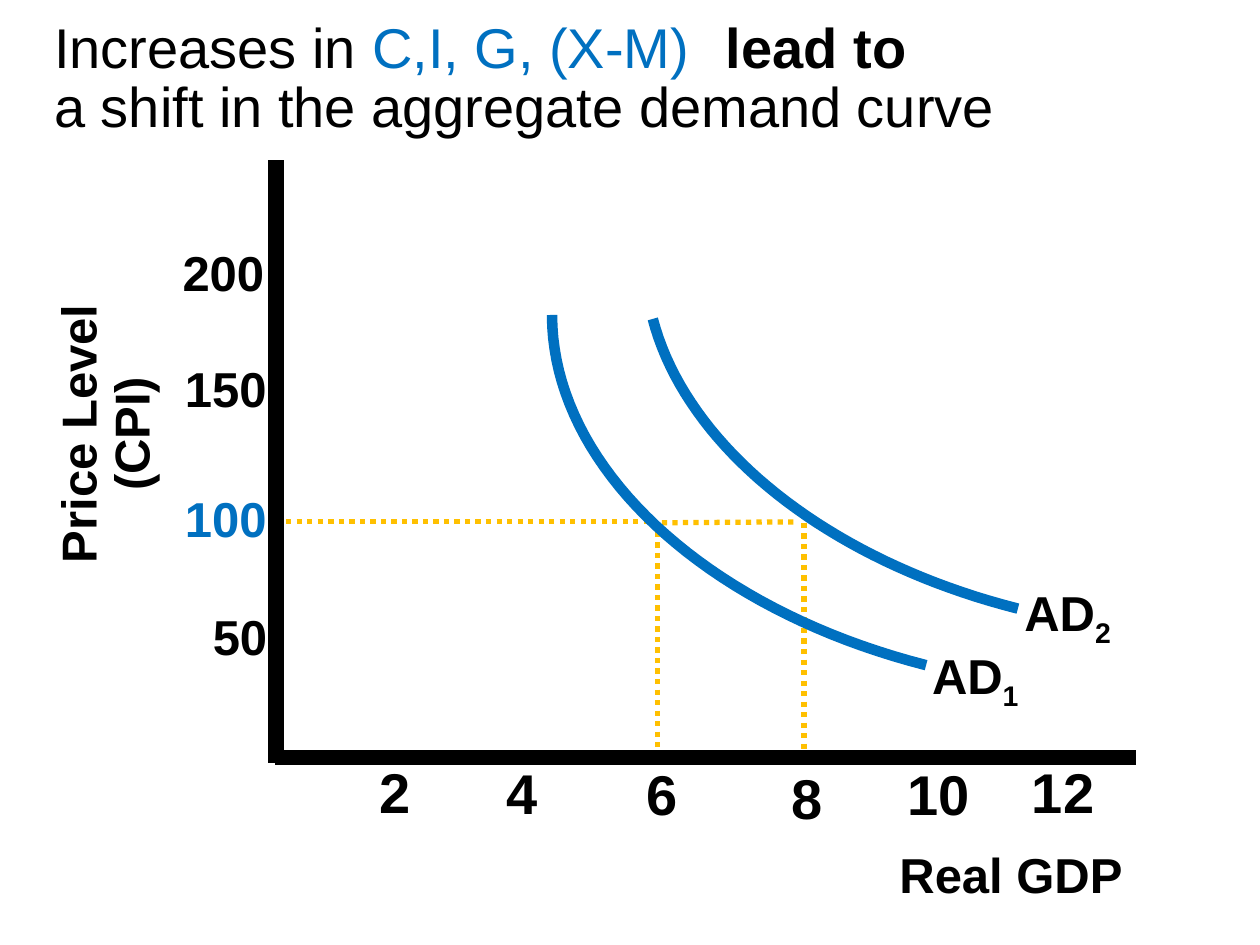
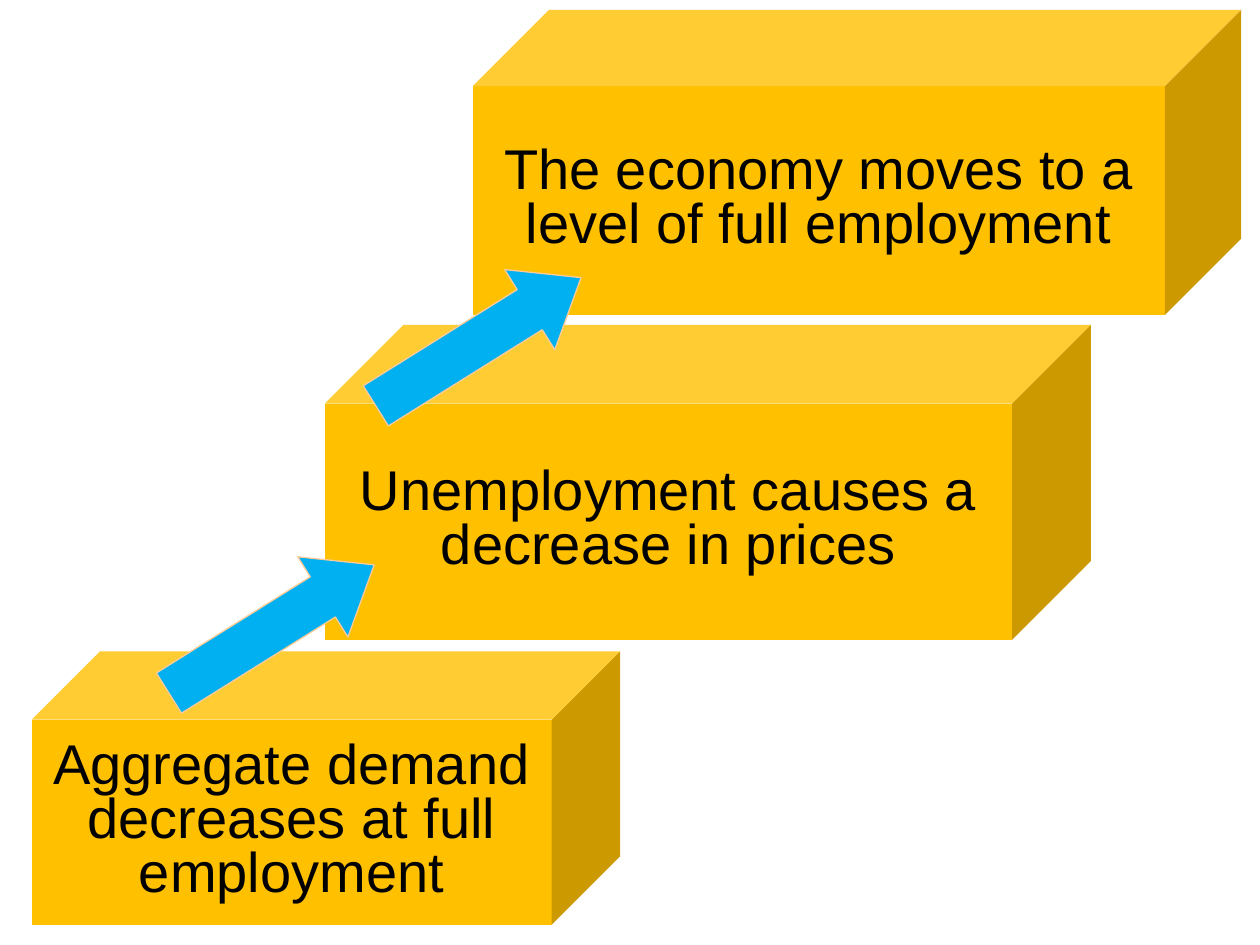
from dataclasses import dataclass

from lxml import etree
from pptx import Presentation
from pptx.dml.color import RGBColor
from pptx.enum.dml import MSO_LINE
from pptx.enum.shapes import MSO_CONNECTOR, MSO_SHAPE
from pptx.enum.text import MSO_ANCHOR, MSO_AUTO_SIZE, PP_ALIGN
from pptx.oxml.ns import qn
from pptx.util import Cm, Pt

LEFT, CENTER = PP_ALIGN.LEFT, PP_ALIGN.CENTER
TOP, MIDDLE = MSO_ANCHOR.TOP, MSO_ANCHOR.MIDDLE
NO_AUTOFIT = MSO_AUTO_SIZE.NONE
STRAIGHT = MSO_CONNECTOR.STRAIGHT
CUBE, UP_ARROW = MSO_SHAPE.CUBE, MSO_SHAPE.UP_ARROW
SOLID, DOTTED = MSO_LINE.SOLID, MSO_LINE.ROUND_DOT
TITLE_ONLY_LAYOUT, BLANK_LAYOUT = 5, 6


@dataclass(frozen=True)
class Theme:
    font: str = "Arial"
    black: RGBColor = RGBColor(0x00, 0x00, 0x00)
    blue: RGBColor = RGBColor(0x00, 0x70, 0xC0)
    gold: RGBColor = RGBColor(0xFF, 0xC0, 0x00)
    sky: RGBColor = RGBColor(0x00, 0xB0, 0xF0)
    peach: RGBColor = RGBColor(0xFF, 0xCC, 0x99)
    large: int = 32
    medium: int = 28
    axis_width: float = 9
    curve_width: float = 6
    guide_width: float = 3
    arrow_outline: float = 0.75
    tight_spacing: float = 0.8
    label_spacing: float = 0.9


THEME = Theme()


@dataclass(frozen=True)
class Run:
    text: str
    size: int = THEME.large
    color: RGBColor = THEME.black
    bold: bool = False
    subscript: bool = False


@dataclass(frozen=True)
class Box:
    left: float
    top: float
    width: float
    height: float

    def lengths(self) -> tuple:
        return Cm(self.left), Cm(self.top), Cm(self.width), Cm(self.height)


@dataclass(frozen=True)
class Label:
    box: Box
    runs: tuple
    align: PP_ALIGN = LEFT
    rotation: float = 0


@dataclass(frozen=True)
class Line:
    start: tuple
    end: tuple
    color: RGBColor
    width: float
    dash: MSO_LINE


@dataclass(frozen=True)
class Step:
    box: Box
    text: str


def medium(text: str, color: RGBColor = THEME.black) -> Run:
    return Run(text, THEME.medium, color, bold=True)


def curve_name(number: str) -> tuple:
    return medium("AD"), Run(number, THEME.medium, bold=True, subscript=True)


def guide(start: tuple, end: tuple) -> Line:
    return Line(start, end, THEME.gold, THEME.guide_width, DOTTED)


def axis(start: tuple, end: tuple) -> Line:
    return Line(start, end, THEME.black, THEME.axis_width, SOLID)


TITLE_BOX = Box(0.84, 0.38, 20.75, 2.5)
TITLE_TAB = 13.54
TITLE_LINES = (
    (
        Run("Increases in "),
        Run("C,I, G, (X-M)", color=THEME.blue),
        Run("\tlead to", bold=True),
    ),
    (Run("a shift in the aggregate demand curve"),),
)

PRICE_LABELS = [
    Label(Box(3.43, 4.9, 2.29, 1.35), (medium("200"),)),
    Label(Box(3.48, 7.24, 2.5, 1.35), (medium("150"),)),
    Label(Box(3.48, 9.86, 2.5, 1.35), (medium("100", THEME.blue),)),
    Label(Box(4.04, 12.24, 2, 1.35), (medium("50"),)),
]
OUTPUT_LABELS = [
    Label(Box(center - 0.95, top, 1.9, 1.3), (Run(text, bold=True),), CENTER)
    for text, center, top in (
        ("2", 7.97, 15.29),
        ("4", 10.52, 15.32),
        ("6", 13.35, 15.34),
        ("8", 16.28, 15.42),
        ("10", 18.92, 15.34),
        ("12", 21.43, 15.29),
    )
]
NAME_LABELS = [
    Label(Box(18.54, 12.9, 3, 1.35), curve_name("1")),
    Label(Box(20.4, 11.63, 3, 1.35), curve_name("2")),
    Label(Box(-1.66, 7.54, 7.67, 2.41), (medium("Price Level (CPI)"),), CENTER, 270),
    Label(Box(17.42, 17.04, 5.92, 1.17), (medium("Real GDP"),), CENTER),
]

GRAPH_LINES = (
    guide((16.21, 10.54), (16.21, 15.39)),
    guide((13.26, 10.72), (13.26, 15.39)),
    guide((13.13, 10.54), (16.08, 10.52)),
    guide((5.77, 10.52), (13.13, 10.52)),
    axis((5.56, 3.23), (5.56, 15.39)),
    axis((5.54, 15.27), (22.91, 15.27)),
)

DEMAND_CURVES = (
    ((18.67, 13.41), (14.2, 12.27), (11.13, 9.4), (11.13, 6.35)),
    ((20.52, 12.27), (16.69, 11.3), (13.84, 9.02), (13.16, 6.43)),
)
CURVE_SEGMENTS = 40

STEPS = (
    Step(Box(0.64, 13.13, 11.86, 5.51), "Aggregate demand decreases at full employment"),
    Step(Box(6.55, 6.55, 15.44, 6.35), "Unemployment causes a decrease in prices"),
    Step(Box(9.53, 0.2, 15.49, 6.15), "The economy moves to a level of full employment"),
)
ARROWS = (Box(4.52, 10.24, 1.91, 4.88), Box(8.69, 4.45, 1.91, 4.88))
ARROW_ROTATION = 58
ARROW_HEAD = 0.64


def write_paragraph(paragraph, runs: tuple, align: PP_ALIGN, spacing: float, before: float) -> None:
    paragraph.alignment = align
    paragraph.line_spacing = spacing
    paragraph.space_before = Pt(before)
    for item in runs:
        run = paragraph.add_run()
        run.text = item.text
        run.font.name = THEME.font
        run.font.size = Pt(item.size)
        run.font.bold = item.bold
        run.font.color.rgb = item.color
        if item.subscript:
            run._r.get_or_add_rPr().set("baseline", "-25000")


def add_title(slide) -> None:
    title = slide.shapes.title
    title.left, title.top, title.width, title.height = TITLE_BOX.lengths()
    frame = title.text_frame
    frame.word_wrap = True
    frame.auto_size = NO_AUTOFIT
    frame.vertical_anchor = TOP
    for index, runs in enumerate(TITLE_LINES):
        paragraph = frame.add_paragraph() if index else frame.paragraphs[0]
        write_paragraph(paragraph, runs, LEFT, THEME.tight_spacing, 3)
    tabs = etree.SubElement(frame.paragraphs[0]._p.get_or_add_pPr(), qn("a:tabLst"))
    etree.SubElement(tabs, qn("a:tab"), pos=str(Cm(TITLE_TAB)), algn="l")


def add_label(slide, label: Label) -> None:
    shape = slide.shapes.add_textbox(*label.box.lengths())
    shape.rotation = label.rotation
    shape.text_frame.word_wrap = True
    write_paragraph(
        shape.text_frame.paragraphs[0], label.runs, label.align, THEME.label_spacing, 1
    )


def add_line(slide, line: Line) -> None:
    points = [Cm(value) for value in line.start + line.end]
    connector = slide.shapes.add_connector(STRAIGHT, *points)
    connector.line.color.rgb = line.color
    connector.line.width = Pt(line.width)
    connector.line.dash_style = line.dash
    etree.SubElement(connector._element.spPr, qn("a:effectLst"))


def curve_point(controls: tuple, t: float) -> tuple:
    weights = ((1 - t) ** 3, 3 * t * (1 - t) ** 2, 3 * t**2 * (1 - t), t**3)
    return tuple(
        Cm(sum(weight * value for weight, value in zip(weights, values)))
        for values in zip(*controls)
    )


def add_curve(slide, controls: tuple) -> None:
    points = [curve_point(controls, i / CURVE_SEGMENTS) for i in range(CURVE_SEGMENTS + 1)]
    builder = slide.shapes.build_freeform(*points[0])
    builder.add_line_segments(points[1:], close=False)
    shape = builder.convert_to_shape()
    shape.shadow.inherit = False
    shape.fill.background()
    shape.line.color.rgb = THEME.blue
    shape.line.width = Pt(THEME.curve_width)


def add_filled_shape(slide, kind: MSO_SHAPE, box: Box, color: RGBColor):
    shape = slide.shapes.add_shape(kind, *box.lengths())
    shape.shadow.inherit = False
    shape.fill.solid()
    shape.fill.fore_color.rgb = color
    return shape


def add_step(slide, step: Step) -> None:
    cube = add_filled_shape(slide, CUBE, step.box, THEME.gold)
    cube.line.fill.background()
    cube.text_frame.word_wrap = True
    cube.text_frame.vertical_anchor = MIDDLE
    write_paragraph(
        cube.text_frame.paragraphs[0], (Run(step.text),), CENTER, THEME.tight_spacing, 0
    )


def add_arrow(slide, box: Box) -> None:
    arrow = add_filled_shape(slide, UP_ARROW, box, THEME.sky)
    arrow.rotation = ARROW_ROTATION
    arrow.adjustments[1] = ARROW_HEAD
    arrow.line.color.rgb = THEME.peach
    arrow.line.width = Pt(THEME.arrow_outline)


def build_demand_slide(presentation) -> None:
    slide = presentation.slides.add_slide(presentation.slide_layouts[TITLE_ONLY_LAYOUT])
    add_title(slide)
    for label in PRICE_LABELS + OUTPUT_LABELS + NAME_LABELS:
        add_label(slide, label)
    for line in GRAPH_LINES:
        add_line(slide, line)
    for controls in DEMAND_CURVES:
        add_curve(slide, controls)


def build_steps_slide(presentation) -> None:
    slide = presentation.slides.add_slide(presentation.slide_layouts[BLANK_LAYOUT])
    for step in STEPS:
        add_step(slide, step)
    for box in ARROWS:
        add_arrow(slide, box)


def main() -> None:
    presentation = Presentation()
    presentation.slide_width = Cm(25.4)
    presentation.slide_height = Cm(19.05)
    build_demand_slide(presentation)
    build_steps_slide(presentation)
    presentation.save("out.pptx")


if __name__ == "__main__":
    main()
